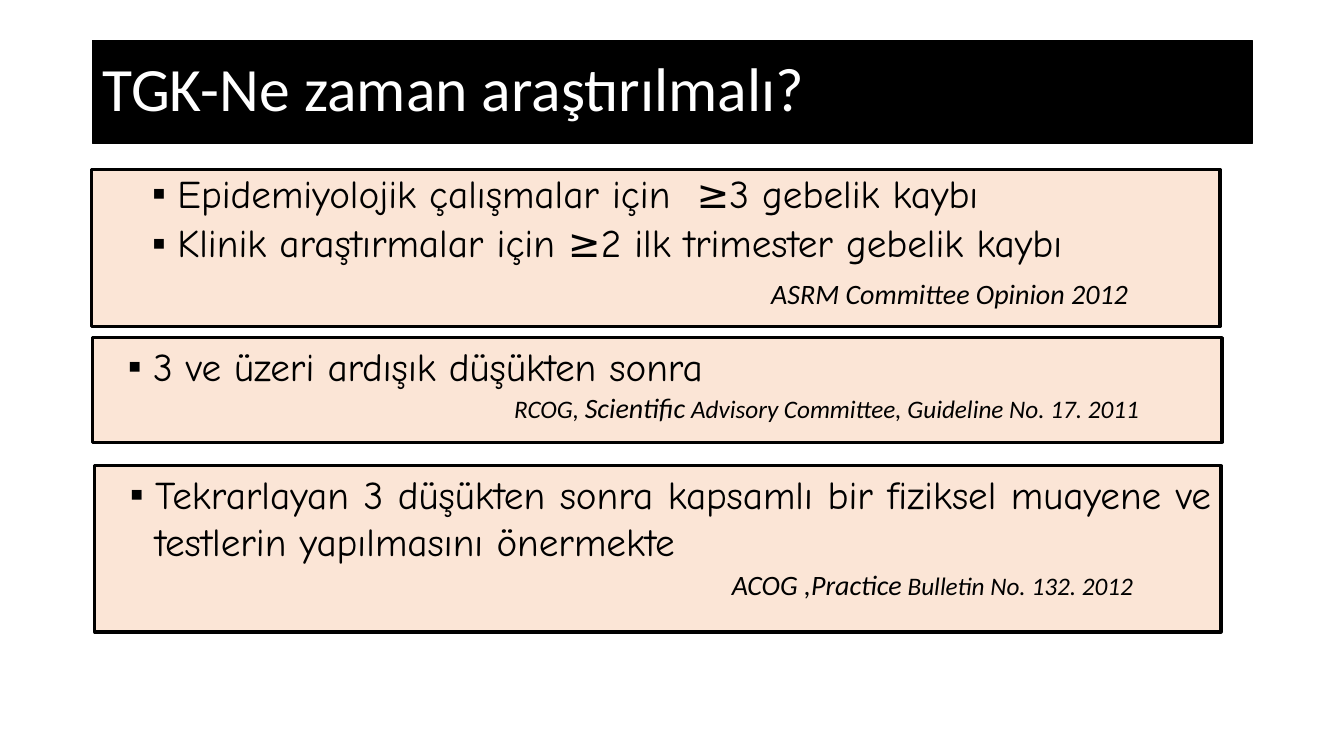
from pptx import Presentation
from pptx.dml.color import RGBColor
from pptx.enum.shapes import MSO_SHAPE
from pptx.enum.text import MSO_ANCHOR, MSO_AUTO_SIZE, PP_ALIGN
from pptx.oxml.ns import qn
from pptx.util import Inches, Pt
from lxml.etree import SubElement

BLACK = RGBColor(0, 0, 0)
WHITE = RGBColor(255, 255, 255)
PEACH = RGBColor(0xFB, 0xE5, 0xD6)


def place(shape, box):
    for name, size in zip(("left", "top", "width", "height"), box):
        setattr(shape, name, Inches(size))


def paint(shape, fill, width):
    shape.fill.solid()
    shape.fill.fore_color.rgb = fill
    shape.line.color.rgb = BLACK
    shape.line.width = Pt(width)


def frame(shape, anchor):
    look = {"word_wrap": True, "auto_size": MSO_AUTO_SIZE.NONE,
            "vertical_anchor": anchor,
            "margin_left": Inches(0.1), "margin_right": Inches(0.1),
            "margin_top": Inches(0.05), "margin_bottom": Inches(0.05)}
    for name, value in look.items():
        setattr(shape.text_frame, name, value)
    return shape.text_frame


def style(para, **look):
    for name, value in look.items():
        setattr(para, name, value)


def write(para, text, size, face, color=BLACK, italic=False):
    run = para.add_run()
    run.text = text
    look = {"size": Pt(size), "name": face, "italic": italic, "bold": False}
    for name, value in look.items():
        setattr(run.font, name, value)
    run.font.color.rgb = color


def indent(para, left, first=0.0, mark=None):
    props = para._p.get_or_add_pPr()
    props.set("marL", str(Inches(left)))
    props.set("indent", str(Inches(first)))
    if mark:
        SubElement(props, qn("a:buFont")).set("typeface", "Arial")
        SubElement(props, qn("a:buChar")).set("char", mark)


def heading(shape, box, text):
    place(shape, box)
    paint(shape, BLACK, 0.75)
    para = frame(shape, MSO_ANCHOR.MIDDLE).paragraphs[0]
    style(para, alignment=PP_ALIGN.LEFT, line_spacing=0.9)
    write(para, text, 44, "Calibri", WHITE)


def panel(shape, box, lines, left=0.5, align=PP_ALIGN.LEFT, space=1.0, gap=0):
    place(shape, box)
    paint(shape, PEACH, 2.25)
    text = frame(shape, MSO_ANCHOR.TOP)
    for i, line in enumerate(lines):
        para = text.add_paragraph() if i else text.paragraphs[0]
        style(para, level=1, alignment=align, line_spacing=space,
              space_before=Pt(gap))
        indent(para, left, -0.25, "▪")
        write(para, line, 28, "Comic Neue")


def block(slide, *args, **look):
    shape = slide.shapes.add_shape(MSO_SHAPE.RECTANGLE, 0, 0, 0, 0)
    shape.shadow.inherit = False
    panel(shape, *args, **look)


def cite(slide, box, runs, left=0.0):
    shape = slide.shapes.add_textbox(0, 0, 0, 0)
    place(shape, box)
    para = frame(shape, MSO_ANCHOR.TOP).paragraphs[0]
    indent(para, left)
    for text, size in runs:
        write(para, text, size, "Calibri", italic=True)


def main():
    deck = Presentation()
    deck.slide_width, deck.slide_height = Inches(13.33), Inches(7.5)
    slide = deck.slides.add_slide(deck.slide_layouts[1])

    # Title bar
    heading(slide.shapes.title, (0.92, 0.4, 11.5, 1.02),
            "TGK-Ne zaman araştırılmalı?")

    # Study criteria
    panel(slide.placeholders[1], (0.91, 1.68, 11.19, 1.56),
          ["Epidemiyolojik çalışmalar için  ≥3 gebelik kaybı",
           "Klinik araştırmalar için ≥2 ilk trimester gebelik kaybı"],
          left=0.75, space=0.9, gap=5)
    cite(slide, (6.55, 2.69, 5.55, 0.44),
         [("ASRM Committee Opinion 2012", 20)], left=1.0)

    # Consecutive losses
    block(slide, (0.92, 3.35, 11.2, 1.04),
          ["3 ve üzeri ardışık düşükten sonra"])
    cite(slide, (5, 3.83, 6.48, 0.44),
         [("RCOG, ", 18), ("Scientific", 20),
          (" Advisory Committee, Guideline No. 17. 2011", 18)])

    # Examination advice
    block(slide, (0.94, 4.62, 11.17, 1.65),
          ["Tekrarlayan 3 düşükten sonra kapsamlı bir fiziksel muayene "
           "ve testlerin yapılmasını önermekte"], align=PP_ALIGN.JUSTIFY)
    cite(slide, (7.16, 5.58, 4.3, 0.44),
         [("ACOG ,Practice", 20), (" Bulletin No. 132. 2012", 18)])

    deck.save("out.pptx")


if __name__ == "__main__":
    main()
